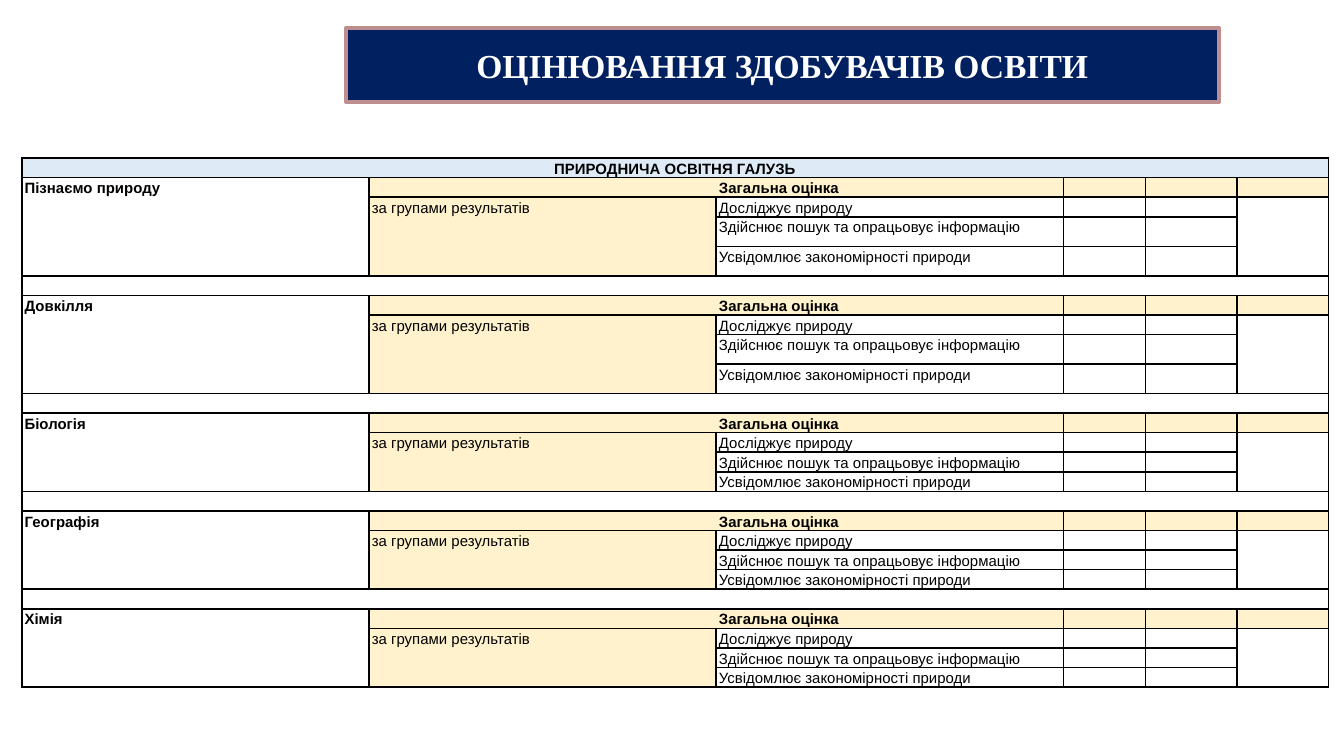
from dataclasses import dataclass
from typing import Optional

from lxml import etree
from pptx import Presentation
from pptx.dml.color import RGBColor
from pptx.enum.shapes import MSO_SHAPE
from pptx.enum.text import MSO_ANCHOR, PP_ALIGN
from pptx.oxml.ns import qn
from pptx.util import Pt

RECTANGLE = MSO_SHAPE.RECTANGLE
MIDDLE = MSO_ANCHOR.MIDDLE
LEFT, CENTER, JUSTIFY = PP_ALIGN.LEFT, PP_ALIGN.CENTER, PP_ALIGN.JUSTIFY


@dataclass(frozen=True)
class Theme:
    navy: str = "002060"
    rose: str = "BC8E8F"
    sky: str = "DEEBF6"
    cream: str = "FFF2CC"
    white: str = "FFFFFF"
    black: str = "000000"
    title_font: str = "Times New Roman"
    body_font: str = "Arial"
    title_size: float = 18
    body_size: float = 8
    border: float = 1


@dataclass(frozen=True)
class Subject:
    name: str
    detail_height: float


@dataclass(frozen=True)
class Entry:
    """Content of a cell, or of the block of cells it spans."""
    row: int
    col: int
    text: str = ""
    fill: Optional[str] = None
    bold: bool = False
    align: PP_ALIGN = LEFT
    rows: int = 1
    cols: int = 1
    sides: str = "LRTB"


THEME = Theme()
ROW, TALL_ROW = 10.5, 15.8
COL_WIDTHS = [186, 186, 186, 44, 49, 49]
SUBJECTS = [
    Subject("Пізнаємо природу", TALL_ROW),
    Subject("Довкілля", TALL_ROW),
    Subject("Біологія", ROW),
    Subject("Географія", ROW),
    Subject("Хімія", ROW),
]
RESULTS = [
    "Досліджує природу",
    "Здійснює пошук та опрацьовує інформацію",
    "Усвідомлює закономірності природи",
]
BLOCK = len(RESULTS) + 1


def add_title(slide, text: str) -> None:
    sp = slide.shapes.add_shape(RECTANGLE, Pt(185.2), Pt(15), Pt(468), Pt(39.6))
    sp.shadow.inherit = False
    sp.fill.solid()
    sp.fill.fore_color.rgb = RGBColor.from_string(THEME.navy)
    sp.line.color.rgb = RGBColor.from_string(THEME.rose)
    sp.line.width = Pt(2)
    tf = sp.text_frame
    tf.text = text
    tf.word_wrap = True
    tf.vertical_anchor = MIDDLE
    tf.margin_left = tf.margin_right = Pt(5)
    tf.margin_top = tf.margin_bottom = Pt(3)
    p = tf.paragraphs[0]
    p.alignment = CENTER
    font = p.runs[0].font
    font.name, font.size, font.bold = THEME.title_font, Pt(THEME.title_size), True
    font.color.rgb = RGBColor.from_string(THEME.white)


def set_borders(cell, sides: str) -> None:
    tc_pr = cell._tc.get_or_add_tcPr()
    for side in "LRTB":
        ln = etree.SubElement(tc_pr, qn(f"a:ln{side}"), w=str(Pt(THEME.border)))
        if side in sides:
            fill = etree.SubElement(ln, qn("a:solidFill"))
            etree.SubElement(fill, qn("a:srgbClr"), val=THEME.black)
        else:
            etree.SubElement(ln, qn("a:noFill"))


def format_cell(cell, entry: Entry) -> None:
    set_borders(cell, entry.sides)
    if entry.fill:
        cell.fill.solid()
        cell.fill.fore_color.rgb = RGBColor.from_string(entry.fill)
    else:
        cell.fill.background()
    cell.margin_left = cell.margin_right = Pt(1.5)
    cell.margin_top = cell.margin_bottom = 0
    p = cell.text_frame.paragraphs[0]
    p.line_spacing = 1.15
    # An empty cell takes its height from the end-of-paragraph size.
    etree.SubElement(p._p, qn("a:endParaRPr"), sz=str(int(THEME.body_size * 100)))


def fill_entry(table, entry: Entry) -> None:
    block = [table.cell(entry.row + i, entry.col + j)
             for i in range(entry.rows) for j in range(entry.cols)]
    for cell in block:
        format_cell(cell, entry)
    if len(block) > 1:
        block[0].merge(block[-1])
    if entry.text:
        p = block[0].text_frame.paragraphs[0]
        p.alignment = entry.align
        r = p.add_run()
        r.text = entry.text
        r.font.name, r.font.size = THEME.body_font, Pt(THEME.body_size)
        r.font.bold = entry.bold
        r.font.color.rgb = RGBColor.from_string(THEME.black)


def subject_entries(subject: Subject, top: int) -> list[Entry]:
    cream, details = THEME.cream, len(RESULTS)
    entries = [
        Entry(top, 0, subject.name, THEME.white, bold=True, rows=BLOCK),
        Entry(top, 1, fill=cream, sides="LTB"),
        Entry(top, 2, "Загальна оцінка", cream, True, JUSTIFY, sides="RTB"),
        *(Entry(top, col, fill=cream) for col in (3, 4, 5)),
        Entry(top + 1, 1, "за групами результатів", cream, rows=details),
        Entry(top + 1, 5, rows=details),
    ]
    for row, result in enumerate(RESULTS, top + 1):
        entries += [Entry(row, 2, result), Entry(row, 3), Entry(row, 4)]
    return entries


def add_grades_table(slide) -> None:
    full = len(COL_WIDTHS)
    heights = []
    entries = [Entry(0, 0, "ПРИРОДНИЧА ОСВІТНЯ ГАЛУЗЬ", THEME.sky, True, CENTER, cols=full)]
    for i, subject in enumerate(SUBJECTS):
        top = 1 + i * (BLOCK + 1)
        heights += [ROW, ROW, ROW, subject.detail_height, subject.detail_height]
        if i:
            entries.append(Entry(top - 1, 0, cols=full))
        entries += subject_entries(subject, top)

    frame = slide.shapes.add_table(len(heights), full, Pt(11.7), Pt(84.7),
                                   Pt(sum(COL_WIDTHS)), Pt(sum(heights)))
    table = frame.table
    table.first_row = table.horz_banding = False
    for column, width in zip(table.columns, COL_WIDTHS):
        column.width = Pt(width)
    for row, height in zip(table.rows, heights):
        row.height = Pt(height)
    for entry in entries:
        fill_entry(table, entry)


def main() -> None:
    prs = Presentation()
    prs.slide_width, prs.slide_height = Pt(720), Pt(405)
    slide = prs.slides.add_slide(prs.slide_layouts[6])
    add_title(slide, "ОЦІНЮВАННЯ ЗДОБУВАЧІВ ОСВІТИ")
    add_grades_table(slide)
    prs.save("out.pptx")


if __name__ == "__main__":
    main()
